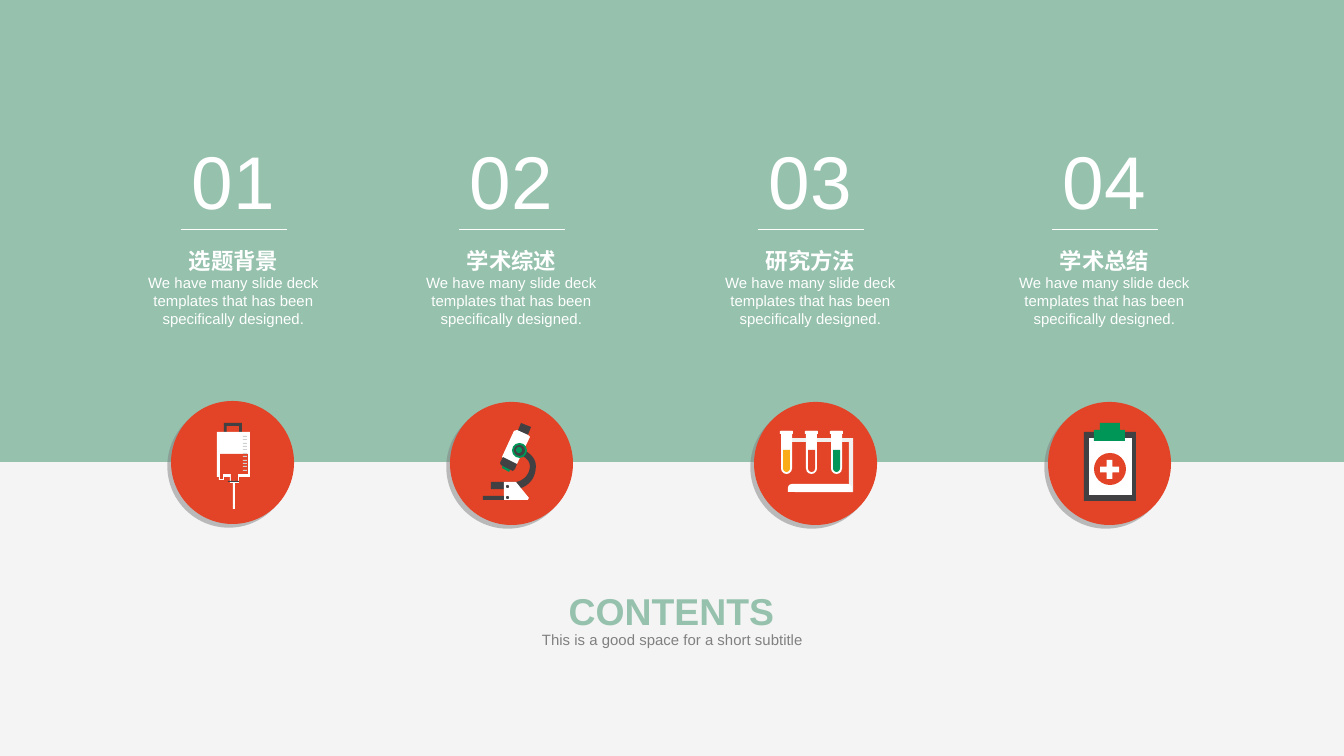
from pptx import Presentation
from pptx.dml.color import RGBColor
from pptx.enum.shapes import MSO_CONNECTOR, MSO_SHAPE
from pptx.enum.text import MSO_ANCHOR, MSO_AUTO_SIZE, PP_ALIGN
from pptx.oxml import parse_xml
from pptx.oxml.ns import nsdecls
from pptx.util import Emu, Pt

EMU_PER_PX = 914400 / 134.4
FONT = "Arial"
SAGE, PAPER, RED, WHITE = "95C1AD", "F4F4F4", "E34326", "FFFFFF"
DARK, GREEN, AMBER, GRAY, TICK = "414042", "009658", "FAAB18", "808080", "CED0D1"
BLURB = "We have many slide deck templates that has been specifically designed."


def px(value):
    return Emu(round(value * EMU_PER_PX))


def color(hex_text):
    return RGBColor.from_string(hex_text)


def bezier(start, control1, control2, end, steps=10):
    """Points along a cubic curve, both ends included."""
    points = []
    for step in range(steps + 1):
        t = step / steps
        weights = ((1 - t) ** 3, 3 * t * (1 - t) ** 2, 3 * t * t * (1 - t), t ** 3)
        corners = (start, control1, control2, end)
        points.append(tuple(sum(w * c[axis] for w, c in zip(weights, corners))
                            for axis in (0, 1)))
    return points


class SlideBuilder:
    """Holds the slide and the shape collection that is being drawn into."""

    def __init__(self, slide):
        self.slide = slide
        self.canvas = slide.shapes
        slide.background.fill.solid()
        slide.background.fill.fore_color.rgb = color(PAPER)

    def start_icon(self):
        self.canvas = self.slide.shapes.add_group_shape().shapes

    def end_icon(self):
        self.canvas = self.slide.shapes

    def paint(self, shape, fill):
        shape.shadow.inherit = False
        shape.fill.solid()
        shape.fill.fore_color.rgb = color(fill)
        shape.line.fill.background()
        return shape

    def preset(self, kind, x, y, width, height, fill, adjust=None):
        shape = self.canvas.add_shape(kind, px(x), px(y), px(width), px(height))
        if adjust is not None:
            shape.adjustments[0] = adjust
        return self.paint(shape, fill)

    def rect(self, x, y, width, height, fill):
        return self.preset(MSO_SHAPE.RECTANGLE, x, y, width, height, fill)

    def disc(self, x, y, size, fill):
        return self.preset(MSO_SHAPE.OVAL, x, y, size, size, fill)

    def polygon(self, points, fill):
        corners = [(px(x), px(y)) for x, y in points]
        outline = self.canvas.build_freeform(*corners[0])
        outline.add_line_segments(corners[1:], close=True)
        return self.paint(outline.convert_to_shape(), fill)

    def badge(self, x, y):
        """Red disc with a hard shadow to the lower left."""
        disc = self.disc(x, y, 123, RED)
        effects = disc.fill._xPr.find(
            "{http://schemas.openxmlformats.org/drawingml/2006/main}effectLst")
        effects.append(parse_xml(
            f'<a:outerShdw {nsdecls("a")} blurRad="0" dist="{Pt(2.8)}" dir="8100000" '
            f'algn="tr" rotWithShape="0"><a:srgbClr val="{GRAY}">'
            '<a:alpha val="50000"/></a:srgbClr></a:outerShdw>'))

    def rule(self, x, y, length):
        line = self.canvas.add_connector(
            MSO_CONNECTOR.STRAIGHT, px(x), px(y), px(x + length), px(y))
        line.line.color.rgb = color(WHITE)
        line.line.width = Pt(0.5)
        line._element.spPr.append(parse_xml(f'<a:effectLst {nsdecls("a")}/>'))

    def style(self, paragraph, size, hue, bold=False):
        paragraph.alignment = PP_ALIGN.CENTER
        paragraph.space_before = Pt(0)
        for run in paragraph.runs:
            run.font.name = FONT
            run.font.size = Pt(size)
            run.font.bold = bold
            run.font.color.rgb = color(hue)

    def heading(self, placeholder, text, x, y, width, height, size, hue, bold=False):
        placeholder.left, placeholder.top = px(x), px(y)
        placeholder.width, placeholder.height = px(width), px(height)
        frame = placeholder.text_frame
        frame.text = text
        frame.word_wrap = False
        frame.auto_size = MSO_AUTO_SIZE.NONE
        frame.vertical_anchor = MSO_ANCHOR.TOP
        self.style(frame.paragraphs[0], size, hue, bold)

    def chapter(self, x, number, topic):
        frame = self.canvas.add_textbox(px(x), px(135), px(191), px(192)).text_frame
        frame.word_wrap = True
        frame.margin_left = frame.margin_right = 0
        frame.margin_top = frame.margin_bottom = 0
        frame.text = "\n".join((number, topic, BLURB))
        for paragraph, size in zip(frame.paragraphs, (40, 12, 8)):
            self.style(paragraph, size, WHITE, bold=size == 12)
        frame.paragraphs[1].space_before = Pt(12)


def draw_drip_bag(b):
    b.preset(MSO_SHAPE.FRAME, 224, 423, 18, 14, DARK, 0.2)
    for x, y, width, height, fill in (
            (217, 432, 33, 45, WHITE), (220, 454, 28, 20, RED),
            (219, 476, 5, 4, WHITE), (230, 476, 9, 7, WHITE),
            (231, 472, 7, 10, RED), (220, 473, 3, 6, RED),
            (233, 481, 2, 28, WHITE), (228, 481, 11, 1, DARK)):
        b.rect(x, y, width, height, fill)
    for tick in range(11):
        b.rect(243, 436 + round(tick * 3.36), 4, 1, TICK)


def draw_microscope(b):
    tip = [(509, 472), (502, 468), (503, 465), (505, 465), (511, 468), (511, 469)]
    eyepiece = [(527, 437), (517, 433), (521, 423), (531, 427)]
    barrel = [(517, 464), (515, 465), (504, 460), (502, 457),
              (514, 431), (517, 430), (528, 435), (530, 437)]
    objective = [(515, 469), (513, 471), (501, 465), (500, 463), (503, 457), (517, 464)]
    arm = (bezier((536, 466), (536, 453), (519, 448), (519, 448))
           + [(516, 449), (516, 453)]
           + bezier((519, 454), (519, 454), (530, 458), (530, 466))
           + bezier((530, 466), (530, 476), (521, 482), (515, 482))
           + [(491, 482), (491, 489)]
           + bezier((515, 489), (525, 489), (536, 481), (536, 466)))
    stand = [(504, 482), (516, 482), (529, 498), (528, 500), (504, 500)]
    for part, fill in ((tip, GREEN), (eyepiece, DARK), (barrel, WHITE),
                       (objective, DARK), (arm, DARK), (stand, WHITE)):
        b.polygon(part, fill)
    b.rect(483, 496, 21, 4, DARK)
    for x, y, size, fill in ((512, 443, 15, GREEN), (514, 445, 11, DARK),
                             (516, 447, 6, GREEN), (506, 485, 3, DARK),
                             (506, 496, 3, DARK)):
        b.disc(x, y, size, fill)


def draw_test_tubes(b):
    b.polygon([(783, 438), (853, 438), (853, 492), (795, 492),
               (795, 489), (849, 489), (849, 442), (783, 442)], "F1F0EF")
    b.preset(MSO_SHAPE.ROUND_2_SAME_RECTANGLE, 788, 484, 64, 8, WHITE, 0.5)
    for index, liquid in enumerate((AMBER, RED, GREEN)):
        x = 780 + 25 * index
        b.rect(x, 431, 13, 3, WHITE)
        for inset, top, width, height, fill in ((1, 431, 11, 43, WHITE),
                                                (3, 450, 7, 22, liquid)):
            b.preset(MSO_SHAPE.ROUND_2_SAME_RECTANGLE,
                     x + inset, top, width, height, fill, 0.5).rotation = 180


def draw_clipboard(b):
    b.rect(1084, 432, 52, 69, DARK)
    b.rect(1089, 438, 43, 57, WHITE)
    b.polygon([(1100, 423), (1120, 423), (1120, 430), (1125, 430),
               (1125, 441), (1094, 441), (1094, 430), (1100, 430)], GREEN)
    b.disc(1094, 453, 32, RED)
    b.preset(MSO_SHAPE.CROSS, 1100, 460, 19, 19, WHITE, 0.35)


CHAPTERS = (  # text left, badge left, badge top, topic, icon
    (138, 171, 401, "选题背景", draw_drip_bag),
    (416, 450, 402, "学术综述", draw_microscope),
    (715, 754, 402, "研究方法", draw_test_tubes),
    (1009, 1048, 402, "学术总结", draw_clipboard),
)


def main():
    deck = Presentation()
    deck.slide_width, deck.slide_height = px(1344), px(756)
    slide = deck.slides.add_slide(deck.slide_layouts[0])
    builder = SlideBuilder(slide)
    builder.rect(0, 0, 1344, 462, SAGE)
    title, subtitle = slide.placeholders
    builder.heading(title, "CONTENTS", 555, 581, 233, 58, 20, SAGE, bold=True)
    builder.heading(subtitle, "This is a good space for a short subtitle",
                    528, 624, 289, 31, 8, GRAY)
    for number, (x, badge_x, badge_y, topic, draw_icon) in enumerate(CHAPTERS, 1):
        builder.badge(badge_x, badge_y)
        builder.chapter(x, f"{number:02}", topic)
        builder.rule(x + 43, 230, 106)
        builder.start_icon()
        draw_icon(builder)
        builder.end_icon()
    deck.save("out.pptx")


if __name__ == "__main__":
    main()
